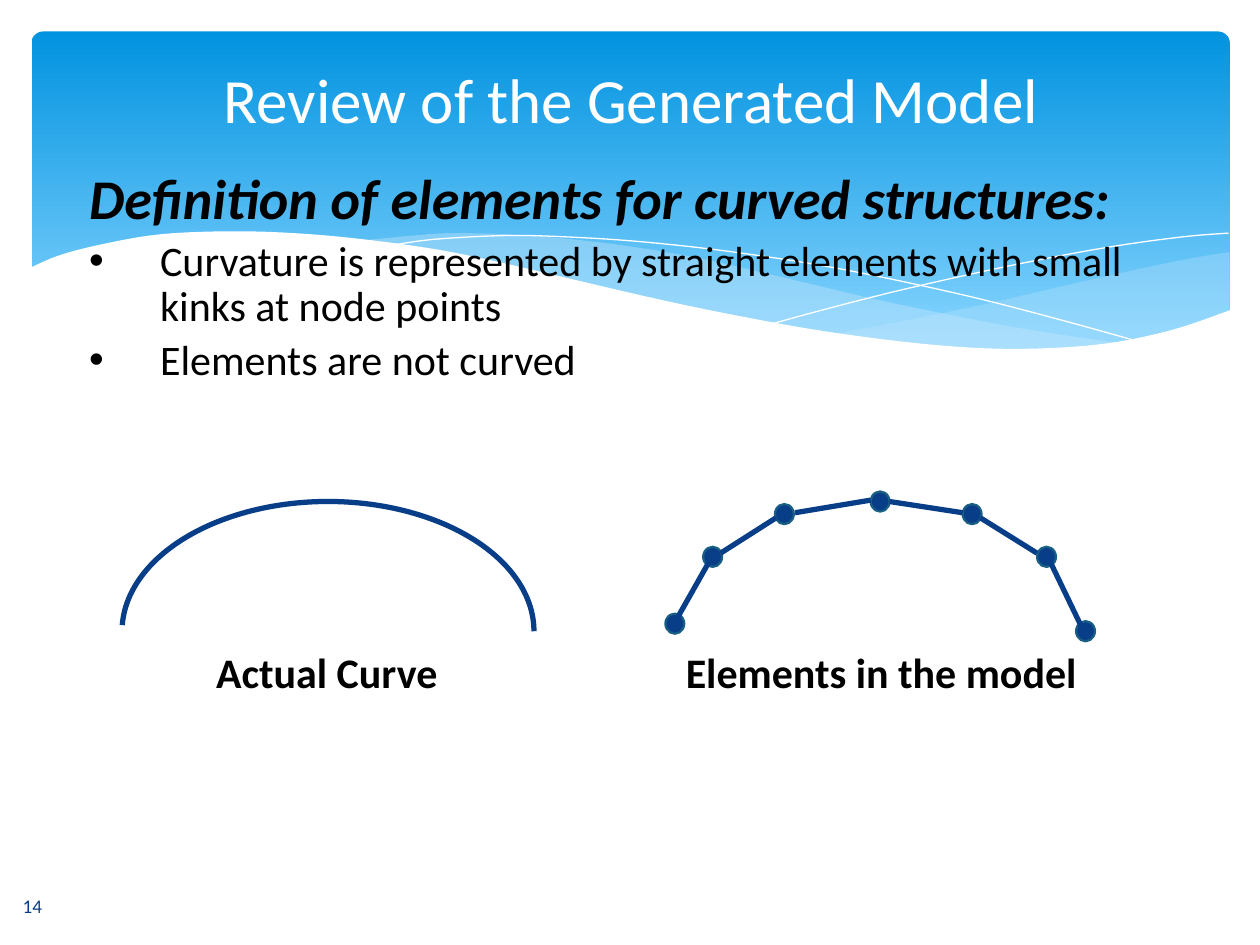
from pptx import Presentation
from pptx.dml.color import RGBColor
from pptx.enum.shapes import MSO_CONNECTOR as Connector, MSO_SHAPE as Shape
from pptx.enum.text import MSO_ANCHOR as Anchor, PP_ALIGN as Align
from pptx.oxml.ns import qn
from pptx.util import Pt
from lxml.etree import SubElement

COLORS = {"black": "000000", "white": "FFFFFF", "navy": "073E87", "rim": "195F84",
          "sky": "0293E0", "light": "83D3FE", "pale": "C6E7FC"}

# Text: (box, anchor, paragraphs); paragraph: (text, alignment, bulleted, font format)
BLACK24 = {"size": Pt(24), "color": "black"}
LABEL = BLACK24 | {"bold": True}
TEXTS = [
    ((5.8, 504, 91.4, 28.8), Anchor.MIDDLE,
     [("14", Align.LEFT, False, {"size": Pt(11), "color": "navy"})]),
    ((43.9, 94.3, 621.4, 149), Anchor.TOP, [
        ("Definition of elements for curved structures:", Align.LEFT, False,
         {"size": Pt(32), "color": "black", "bold": True, "italic": True}),
        ("Curvature is represented by straight elements with small kinks at node points",
         Align.LEFT, True, BLACK24),
        ("Elements are not curved", Align.LEFT, True, BLACK24)]),
    ((18.7, 36, 684, 72), Anchor.TOP,
     [("Review of the Generated Model", Align.CENTER, False,
       {"size": Pt(36), "color": "white"})]),
    ((65.5, 369.4, 242.6, 35.3), Anchor.TOP,
     [("Actual Curve", Align.CENTER, False, LABEL)]),
    ((382.3, 369.4, 242.6, 58.3), Anchor.TOP,
     [("Elements in the model", Align.CENTER, False, LABEL)]),
]

# Banner waves: knots of smooth curves
RIGHT_TOP = [(702.7, 144), (673.2, 149), (619.9, 160.6), (560.9, 174.2), (508.3, 185),
             (475.9, 190.8)]
RIGHT_BOTTOM = [(475.9, 190.8), (507.6, 195.1), (545, 198.7), (586.1, 200.2),
                (621.4, 198), (651.6, 193.7), (678.2, 186.5), (702.7, 177.8)]
MIDDLE_TOP = [(643, 196.6), (581, 187.2), (508.3, 172.8), (452.9, 159.8), (399.6, 147.6),
              (352.1, 139.7), (302.4, 134.6), (259.9, 133.2), (236.2, 134.6),
              (205.9, 137.5)]
MIDDLE_BOTTOM = [(205.9, 137.5), (246.2, 143.3), (290.9, 151.9), (353.5, 167),
                 (407.5, 178.6), (468, 190.1), (519.8, 197.3), (573.1, 200.2),
                 (610.6, 199.4), (643, 196.6)]
FALLING_LINE = [(222.5, 140.4), (247.7, 136.8), (288.7, 134.6), (324, 135.4),
                (367.2, 138.2), (419, 144), (478.8, 153.4), (547.2, 167.8),
                (598.3, 180.7), (653, 195.8)]
RISING_LINE = [(441.4, 185), (470.2, 177.1), (518.4, 164.9), (580.3, 151.2),
               (634.3, 141.1), (675.4, 135.4), (702, 133.2)]
WHITE_EDGE = [(703.4, 177.1), (669.6, 188.6), (630, 196.6), (582.5, 199.4),
              (535.7, 197.3), (481, 190.8), (434.2, 182.9), (380.9, 172.1),
              (321.8, 158.4), (281.5, 149), (244.8, 141.8), (195.1, 135.4),
              (151.9, 132.5), (115.9, 132.5), (85.7, 134.6), (54.7, 140.4),
              (33.1, 146.2), (16.6, 153.4)]
WHITE_BASE = [(16.6, 236.9), (703.4, 236.9)]

# Model: node centres and element ends
NODE_SIZE = (10.8, 11.5)
NODES = [(385.6, 356.4), (620.3, 360.7), (407.2, 318.2), (448.2, 293.8),
         (555.5, 293.8), (598, 318.2), (502.9, 286.6)]
ELEMENTS = [(406.8, 318.2, 385.2, 356.4), (600.5, 321.8, 619.2, 360.7),
            (443.5, 295.9, 411.8, 316.1), (560.2, 295.9, 592.6, 316.1),
            (508.3, 286.6, 550.1, 293), (454.3, 293, 497.5, 285.8)]


def rgb(name):
    return RGBColor.from_string(COLORS[name])


def smooth(knots, steps=5):
    """Sample a Catmull-Rom curve through the knots."""
    padded = [knots[0], *knots, knots[-1]]
    points = [knots[0]]
    for a, b, c, d in zip(padded, padded[1:], padded[2:], padded[3:]):
        for step in range(1, steps + 1):
            t = step / steps
            points.append(tuple(
                q + t / 2 * (r - p + t * (2 * p - 5 * q + 4 * r - s
                                          + t * (3 * q - p - 3 * r + s)))
                for p, q, r, s in zip(a, b, c, d)))
    return points


def style(shape, fill=None, line=None, width=0.0, opacity=100):
    shape.shadow.inherit = False
    if fill:
        shape.fill.solid()
        shape.fill.fore_color.rgb = rgb(fill)
        if opacity < 100:
            color = shape.fill._xPr.find(".//" + qn("a:srgbClr"))
            SubElement(color, qn("a:alpha"), val=str(opacity * 1000))
    else:
        shape.fill.background()
    if line:
        shape.line.color.rgb = rgb(line)
        shape.line.width = Pt(width)
    else:
        shape.line.fill.background()


def add_shape(slide, kind, *box):
    return slide.shapes.add_shape(kind, *map(Pt, box))


def add_outline(slide, points, closed, **look):
    first, *rest = [tuple(map(Pt, point)) for point in points]
    builder = slide.shapes.build_freeform(*first, scale=1.0)
    builder.add_line_segments(rest, close=closed)
    style(builder.convert_to_shape(), **look)


def add_text(slide, box, anchor, paragraphs):
    frame = slide.shapes.add_textbox(*map(Pt, box)).text_frame
    frame.word_wrap = True
    frame.vertical_anchor = anchor
    for index, (text, alignment, bulleted, formats) in enumerate(paragraphs):
        paragraph = frame.paragraphs[0] if index == 0 else frame.add_paragraph()
        paragraph.alignment = alignment
        paragraph.line_spacing = 0.9
        if index:
            paragraph.space_before = Pt(4.8)
        if bulleted:
            properties = paragraph._p.get_or_add_pPr()
            properties.set("marL", str(Pt(40.5)))
            properties.set("indent", str(Pt(-40.5)))
            SubElement(properties, qn("a:buFont"), typeface="Arial")
            SubElement(properties, qn("a:buChar"), char="•")
        run = paragraph.add_run()
        run.text = text
        run.font.name = "Calibri"
        for name, value in formats.items():
            if name == "color":
                run.font.color.rgb = rgb(value)
            else:
                setattr(run.font, name, value)


def main():
    presentation = Presentation()
    presentation.slide_width, presentation.slide_height = Pt(720), Pt(540)
    slide = presentation.slides.add_slide(presentation.slide_layouts[6])

    # Gradient banner
    banner = add_shape(slide, Shape.ROUNDED_RECTANGLE, 18, 18, 684.7, 194.4)
    banner.adjustments[0] = 0.034
    style(banner)
    banner.fill.gradient()
    banner.fill.gradient_angle = 270
    for stop, (position, color) in zip(banner.fill.gradient_stops,
                                       [(0, "sky"), (0.9, "light")]):
        stop.position = position
        stop.color.rgb = rgb(color)

    # Waves
    add_outline(slide, smooth(RIGHT_TOP) + smooth(RIGHT_BOTTOM), True,
                fill="pale", opacity=29)
    add_outline(slide, smooth(MIDDLE_TOP) + smooth(MIDDLE_BOTTOM), True,
                fill="pale", opacity=40)
    for knots in (FALLING_LINE, RISING_LINE):
        add_outline(slide, smooth(knots), False, line="white")
    add_outline(slide, smooth(WHITE_EDGE) + WHITE_BASE, True, fill="white")

    # Actual curve
    arc = add_shape(slide, Shape.ARC, 69.8, 286.6, 235.4, 148.3)
    arc.adjustments[0], arc.adjustments[1] = 109.03, 0
    style(arc, line="navy", width=3)

    # Nodes and straight elements
    width, height = NODE_SIZE
    for x, y in NODES:
        node = add_shape(slide, Shape.OVAL, x - width / 2, y - height / 2, width, height)
        style(node, fill="navy", line="rim", width=1.25)
    for ends in ELEMENTS:
        element = slide.shapes.add_connector(Connector.STRAIGHT, *map(Pt, ends))
        element.line.color.rgb = rgb("navy")
        element.line.width = Pt(3)
        SubElement(element._element.spPr, qn("a:effectLst"))

    for box, anchor, paragraphs in TEXTS:
        add_text(slide, box, anchor, paragraphs)
    presentation.save("out.pptx")


if __name__ == "__main__":
    main()
